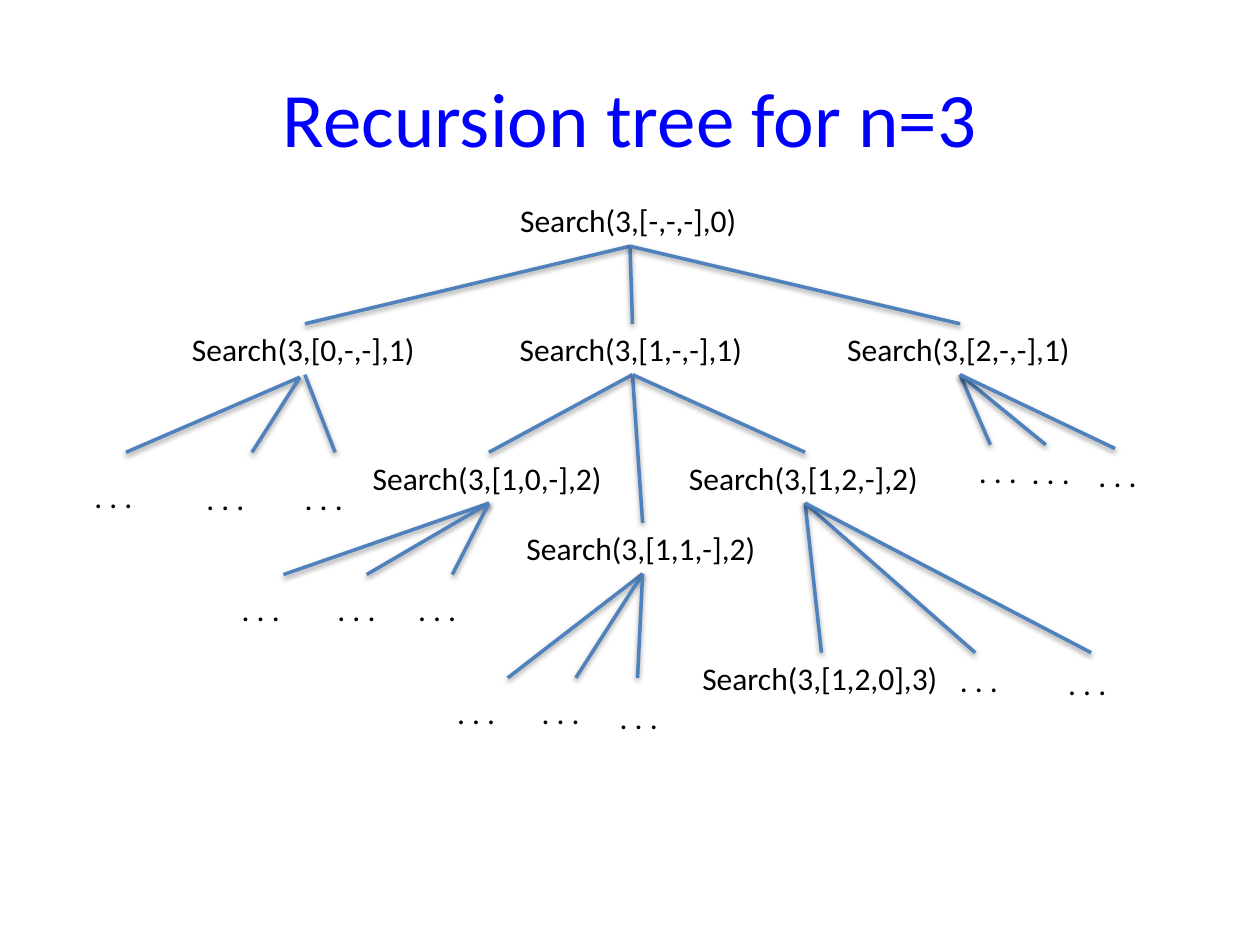
from pptx import Presentation, util as u
from pptx.dml.color import RGBColor
from pptx.enum import shapes, text

# Content: the page is a grid of 100 columns by 75 rows
COLORS = {"title": "0000FF", "label": "000000", "branch": "4F81BD"}
COLUMNS, ROWS, CELL = 100, 75, 0.1
TITLE = "Recursion tree for n=3"
DOTS = ". . ."

# Call: (parent, centre column, top row)
CALLS = {
    "Search(3,[-,-,-],0)": (None, 50, 15.5),
    "Search(3,[0,-,-],1)": ("Search(3,[-,-,-],0)", 24.2, 25.7),
    "Search(3,[1,-,-],1)": ("Search(3,[-,-,-],0)", 50.2, 25.7),
    "Search(3,[2,-,-],1)": ("Search(3,[-,-,-],0)", 76.2, 25.7),
    "Search(3,[1,0,-],2)": ("Search(3,[1,-,-],1)", 38.8, 35.9),
    "Search(3,[1,1,-],2)": ("Search(3,[1,-,-],1)", 51, 41.5),
    "Search(3,[1,2,-],2)": ("Search(3,[1,-,-],1)", 63.9, 35.9),
    "Search(3,[1,2,0],3)": ("Search(3,[1,2,-],2)", 65.2, 51.8),
}

# Unexpanded branches: (parent, shift of the start, [(tip, left top of the dots)])
OPEN_BRANCHES = [
    ("Search(3,[0,-,-],1)", (-0.4, 0.2), [((10, 35.9), (6.5, 37.4)),
                                          ((20, 35.9), (15.4, 37.5))]),
    ("Search(3,[0,-,-],1)", (0, 0), [((26.6, 35.9), (23.2, 37.5))]),
    ("Search(3,[1,0,-],2)", (0, 0), [((22.5, 45.6), (18.2, 46.3)),
                                     ((29.1, 45.6), (25.8, 46.3)),
                                     ((35.9, 45.6), (32.2, 46.3))]),
    ("Search(3,[1,1,-],2)", (0, 0), [((40.3, 53.8), (35.3, 54.5)),
                                     ((45.7, 53.8), (42, 54.5)),
                                     ((50.6, 53.8), (48.2, 54.9))]),
    ("Search(3,[1,2,-],2)", (0, 0), [((77.4, 51.8), (75.2, 52)),
                                     ((86.6, 51.8), (83.8, 52.2))]),
    ("Search(3,[2,-,-],1)", (0, 0), [((78.6, 35.3), (76.7, 35.4)),
                                     ((83, 35.3), (80.9, 35.5)),
                                     ((88.5, 35.6), (86.2, 35.7))]),
]

# Formats
LABEL_HEIGHT, DOTS_WIDTH = 4.04, 5.6
LABEL = {"size": u.Pt(18), "name": "Calibri"}
HEADING = {"size": u.Pt(44), "name": "Calibri"}
LABEL_FRAME = {"word_wrap": False, "auto_size": text.MSO_AUTO_SIZE.SHAPE_TO_FIT_TEXT}
HEADING_FRAME = {"word_wrap": True, "vertical_anchor": text.MSO_ANCHOR.MIDDLE}


def cells(*counts):
    return [u.Inches(count * CELL) for count in counts]


def add_text(page, words, place, frame_format, font_format, color,
             align=text.PP_ALIGN.LEFT):
    frame = page.shapes.add_textbox(*cells(*place)).text_frame
    para = frame.paragraphs[0]
    para.alignment = align
    span = para.add_run()
    span.text = words
    for target, values in ((frame, frame_format), (span.font, font_format)):
        for name, value in values.items():
            setattr(target, name, value)
    span.font.color.rgb = RGBColor.from_string(COLORS[color])


def add_label(page, words, left, top, width):
    add_text(page, words, (left, top, width, LABEL_HEIGHT), LABEL_FRAME, LABEL, "label")


def add_branch(page, start, tip):
    # The branch keeps the soft shadow that the theme gives to connectors
    branch = page.shapes.add_connector(shapes.MSO_CONNECTOR.STRAIGHT,
                                       *cells(*start, *tip))
    branch.line.color.rgb = RGBColor.from_string(COLORS["branch"])
    branch.line.width = u.Pt(2)


def bottom_of(call):
    _, centre, top = CALLS[call]
    return centre, top + LABEL_HEIGHT


def main():
    deck = Presentation()
    deck.slide_width, deck.slide_height = cells(COLUMNS, ROWS)
    page = deck.slides.add_slide(deck.slide_layouts[6])

    # Title
    add_text(page, TITLE, (5, 3, COLUMNS - 10, 12.5), HEADING_FRAME, HEADING,
             "title", text.PP_ALIGN.CENTER)

    # Calls: a label widens by half a column with each level
    for call, (_, centre, top) in CALLS.items():
        level = int(call[-2])
        width = 19.4 + 0.5 * level
        add_label(page, call, centre - width / 2, top, width)

    # Branches between calls
    for parent, centre, top in CALLS.values():
        if parent:
            add_branch(page, bottom_of(parent), (centre, top))

    # Branches that end in dots
    for parent, (shift_x, shift_y), ends in OPEN_BRANCHES:
        x, y = bottom_of(parent)
        for tip, dots in ends:
            add_branch(page, (x + shift_x, y + shift_y), tip)
            add_label(page, DOTS, *dots, DOTS_WIDTH)

    deck.save("out.pptx")


if __name__ == "__main__":
    main()
